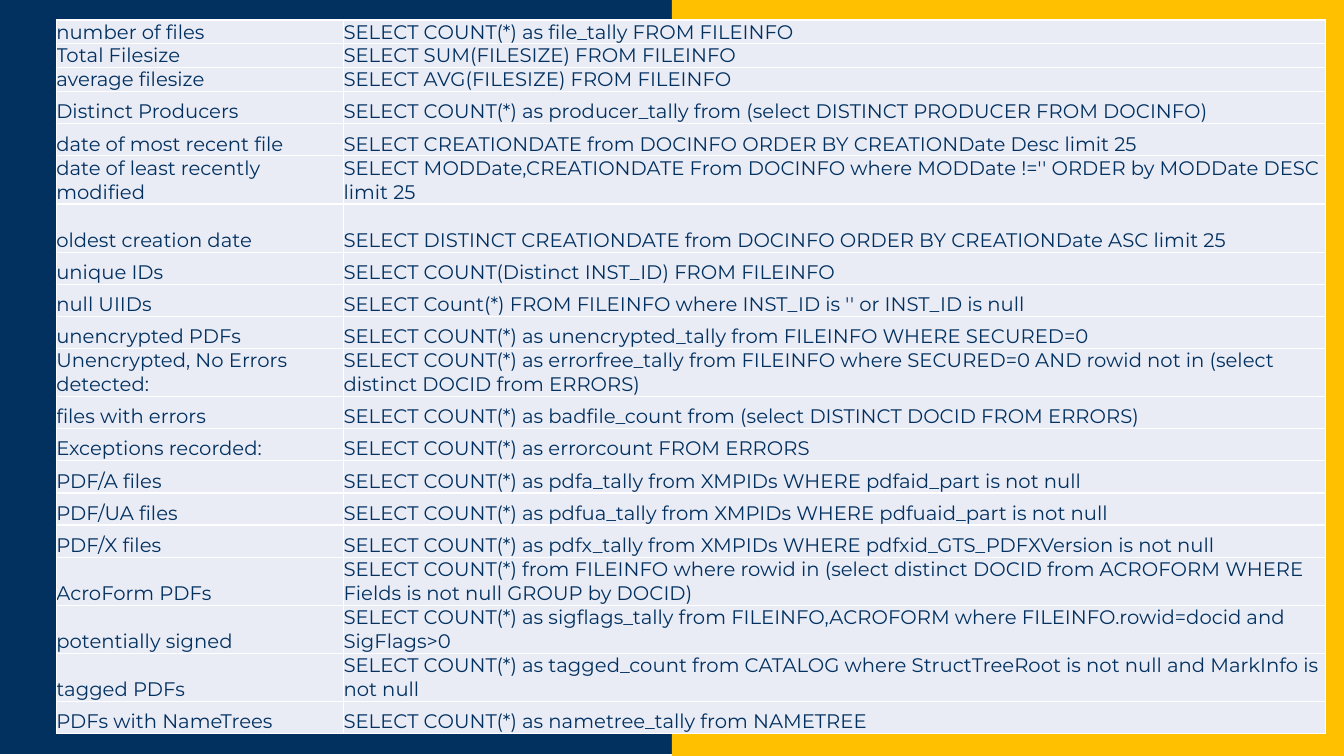
from lxml.etree import SubElement
from pptx import Presentation
from pptx.dml.color import RGBColor
from pptx.enum.shapes import MSO_SHAPE
from pptx.enum.text import MSO_ANCHOR
from pptx.oxml.ns import qn
from pptx.util import Pt

NAVY, GOLD, PALE, WHITE = "023160", "FFC000", "E9EBF5", "FFFFFF"
UNIT = 11.47  # row heights are multiples of this

# Label, query, height in units
ROWS = [
    ("number of files", "SELECT COUNT(*) as file_tally FROM FILEINFO", 1),
    ("Total Filesize", "SELECT SUM(FILESIZE) FROM FILEINFO", 1),
    ("average filesize", "SELECT AVG(FILESIZE) FROM FILEINFO", 1),
    ("Distinct Producers",
     "SELECT COUNT(*) as producer_tally from (select DISTINCT PRODUCER FROM DOCINFO)", 2),
    ("date of most recent file",
     "SELECT CREATIONDATE from DOCINFO ORDER BY CREATIONDate Desc limit 25", 2),
    ("date of least recently modified",
     "SELECT MODDate,CREATIONDATE From DOCINFO where MODDate !='' "
     "ORDER by MODDate DESC limit 25", 3),
    ("oldest creation date",
     "SELECT DISTINCT CREATIONDATE from DOCINFO ORDER BY CREATIONDate ASC limit 25", 3),
    ("unique IDs", "SELECT COUNT(Distinct INST_ID) FROM FILEINFO", 2),
    ("null UIIDs",
     "SELECT Count(*) FROM FILEINFO where INST_ID is '' or INST_ID is null", 2),
    ("unencrypted PDFs",
     "SELECT COUNT(*) as unencrypted_tally from FILEINFO WHERE SECURED=0", 2),
    ("Unencrypted, No Errors detected:",
     "SELECT COUNT(*) as errorfree_tally from FILEINFO where SECURED=0 "
     "AND rowid not in (select distinct DOCID from ERRORS)", 3),
    ("files with errors",
     "SELECT COUNT(*) as badfile_count from (select DISTINCT DOCID FROM ERRORS)", 2),
    ("Exceptions recorded:", "SELECT COUNT(*) as errorcount FROM ERRORS", 2),
    ("PDF/A files",
     "SELECT COUNT(*) as pdfa_tally from XMPIDs WHERE pdfaid_part is not null", 2),
    ("PDF/UA files",
     "SELECT COUNT(*) as pdfua_tally from XMPIDs WHERE pdfuaid_part is not null", 2),
    ("PDF/X files",
     "SELECT COUNT(*) as pdfx_tally from XMPIDs WHERE pdfxid_GTS_PDFXVersion is not null", 2),
    ("AcroForm PDFs",
     "SELECT COUNT(*) from FILEINFO where rowid in (select distinct DOCID "
     "from ACROFORM WHERE Fields is not null GROUP by DOCID)", 3),
    ("potentially signed",
     "SELECT COUNT(*) as sigflags_tally from FILEINFO,ACROFORM "
     "where FILEINFO.rowid=docid and SigFlags>0", 3),
    ("tagged PDFs",
     "SELECT COUNT(*) as tagged_count from CATALOG "
     "where StructTreeRoot is not null and MarkInfo is not null", 3),
    ("PDFs with NameTrees", "SELECT COUNT(*) as nametree_tally from NAMETREE", 2),
]


def paint(fill, color):
    fill.solid()
    fill.fore_color.rgb = RGBColor.from_string(color)


def edge(cell):
    """Give a cell thin white borders, placed ahead of its fill."""
    props = cell._tc.get_or_add_tcPr()
    for spot, side in enumerate(("lnL", "lnR", "lnT", "lnB")):
        line = SubElement(props, qn(f"a:{side}"), w=str(Pt(1)))
        solid = SubElement(line, qn("a:solidFill"))
        SubElement(solid, qn("a:srgbClr"), val=WHITE)
        props.insert(spot, line)


deck = Presentation()
deck.slide_width, deck.slide_height = Pt(960), Pt(540)
slide = deck.slides.add_slide(deck.slide_layouts[6])

# Two-colour backdrop
for left, top, color in ((0, -1.5, NAVY), (480, 0, GOLD)):
    half = slide.shapes.add_shape(MSO_SHAPE.RECTANGLE, Pt(left), Pt(top), Pt(480), Pt(540))
    half.shadow.inherit = False
    half.line.fill.background()
    paint(half.fill, color)
paint(slide.background.fill, WHITE)

# Query table
high = UNIT * sum(units for _, _, units in ROWS)
table = slide.shapes.add_table(
    len(ROWS), 2, Pt(40.2), Pt(14.3), Pt(906.5), Pt(high)).table
table.first_row = table.horz_banding = False
table.columns[0].width = Pt(205.2)
table.columns[1].width = Pt(701.3)
for row, (label, query, units) in zip(table.rows, ROWS):
    row.height = Pt(units * UNIT)
    for cell, text in zip(row.cells, (label, query)):
        cell.text = text
        cell.vertical_anchor = MSO_ANCHOR.BOTTOM
        cell.margin_left = cell.margin_right = cell.margin_top = cell.margin_bottom = 0
        paint(cell.fill, PALE)
        edge(cell)
        font = cell.text_frame.paragraphs[0].font
        font.name, font.size = "Montserrat", Pt(14)
        font.color.rgb = RGBColor.from_string(NAVY)

deck.save("out.pptx")
